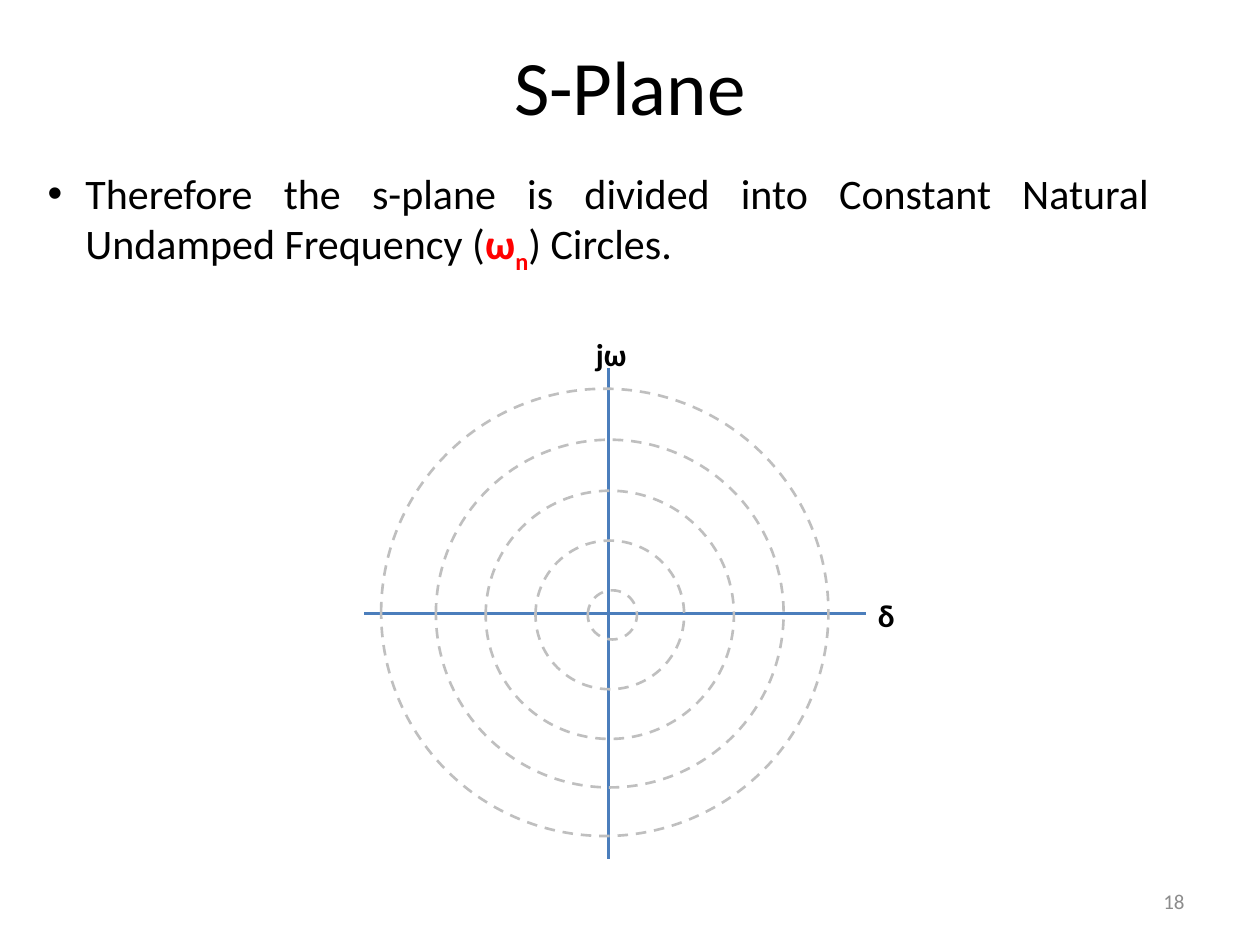
import pptx
import pptx.util
import pptx.dml.color
import pptx.enum.dml
import pptx.enum.shapes
import pptx.enum.text
from lxml import etree
from pptx.oxml.ns import qn
from pptx.util import Inches

ALIGN = pptx.enum.text.PP_ALIGN
MIDDLE = pptx.enum.text.MSO_ANCHOR.MIDDLE
CIRCLE_CENTERS = [(4.86, 4.88), (4.84, 4.88), (4.84, 4.88), (4.84, 4.87), (4.8, 4.86)]
SMALLEST_DIAMETER = 0.39
DIAMETER_STEP = 0.79


def color(hex_value):
    return pptx.dml.color.RGBColor.from_string(hex_value)


def set_font(font, size, hex_value="000000", bold=False):
    font.name = "Calibri"
    font.size = pptx.util.Pt(size)
    font.bold = bold
    font.color.rgb = color(hex_value)


def set_line(line, hex_value):
    line.color.rgb = color(hex_value)
    line.width = pptx.util.Pt(1.5)


def add_title(slide, text):
    title = slide.shapes.title
    title.left, title.top = Inches(0.5), Inches(0.05)
    title.width, title.height = Inches(9), Inches(1.25)
    title.text_frame.text = text
    title.text_frame.vertical_anchor = MIDDLE
    paragraph = title.text_frame.paragraphs[0]
    paragraph.alignment = ALIGN.CENTER
    set_font(paragraph.font, 44)


def add_text(slide, left, top, width, height, text="", size=18, hex_value="000000",
             bold=False, alignment=ALIGN.LEFT, wrap=True):
    box = slide.shapes.add_textbox(Inches(left), Inches(top), Inches(width), Inches(height))
    box.text_frame.word_wrap = wrap
    paragraph = box.text_frame.paragraphs[0]
    paragraph.text = text
    paragraph.alignment = alignment
    set_font(paragraph.font, size, hex_value, bold)
    return box


def add_statement(slide):
    box = add_text(slide, 0.28, 1.28, 8.94, 0.91, size=24, alignment=ALIGN.JUSTIFY)
    paragraph = box.text_frame.paragraphs[0]
    properties = paragraph._p.get_or_add_pPr()
    properties.set("marL", str(Inches(0.3)))
    properties.set("indent", str(Inches(-0.3)))
    bullet = etree.Element(qn("a:buChar"), char="•")
    properties.insert(0, bullet)
    bullet_font = etree.Element(qn("a:buFont"), typeface="Arial")
    properties.insert(0, bullet_font)

    paragraph.add_run().text = (
        "Therefore the s-plane is divided into Constant Natural Undamped Frequency ("
    )
    for text in ("ω", "n"):
        symbol = paragraph.add_run()
        symbol.text = text
        symbol.font.bold = True
        symbol.font.color.rgb = color("FF0000")
    symbol.font._element.set("baseline", "-25000")
    paragraph.add_run().text = ") Circles. "


def add_axis(slide, start_x, start_y, end_x, end_y):
    axis = slide.shapes.add_connector(
        pptx.enum.shapes.MSO_CONNECTOR.STRAIGHT,
        Inches(start_x), Inches(start_y), Inches(end_x), Inches(end_y),
    )
    set_line(axis.line, "4B7EBC")
    etree.SubElement(axis._element.spPr, qn("a:effectLst"))


def add_circle(slide, center_x, center_y, diameter):
    circle = slide.shapes.add_shape(
        pptx.enum.shapes.MSO_SHAPE.OVAL,
        Inches(center_x - diameter / 2), Inches(center_y - diameter / 2),
        Inches(diameter), Inches(diameter),
    )
    circle.shadow.inherit = False
    circle.fill.background()
    set_line(circle.line, "BFBFBF")
    circle.line.dash_style = pptx.enum.dml.MSO_LINE.DASH


def main():
    presentation = pptx.Presentation()
    presentation.slide_width, presentation.slide_height = Inches(10), Inches(7.5)
    slide = presentation.slides.add_slide(presentation.slide_layouts[5])

    add_title(slide, "S-Plane")
    add_axis(slide, 4.83, 2.92, 4.83, 6.82)
    add_axis(slide, 6.87, 4.87, 2.89, 4.87)
    add_text(slide, 6.87, 4.68, 0.34, 0.4, "δ", bold=True, wrap=False)
    add_text(slide, 4.63, 2.61, 0.45, 0.4, "jω", bold=True, wrap=False)
    add_statement(slide)
    for index, (center_x, center_y) in enumerate(CIRCLE_CENTERS):
        add_circle(slide, center_x, center_y, SMALLEST_DIAMETER + index * DIAMETER_STEP)
    number = add_text(slide, 7.17, 6.95, 2.33, 0.4, "18", 12, "8C8C8C", alignment=ALIGN.RIGHT)
    number.text_frame.vertical_anchor = MIDDLE

    presentation.save("out.pptx")


if __name__ == "__main__":
    main()
